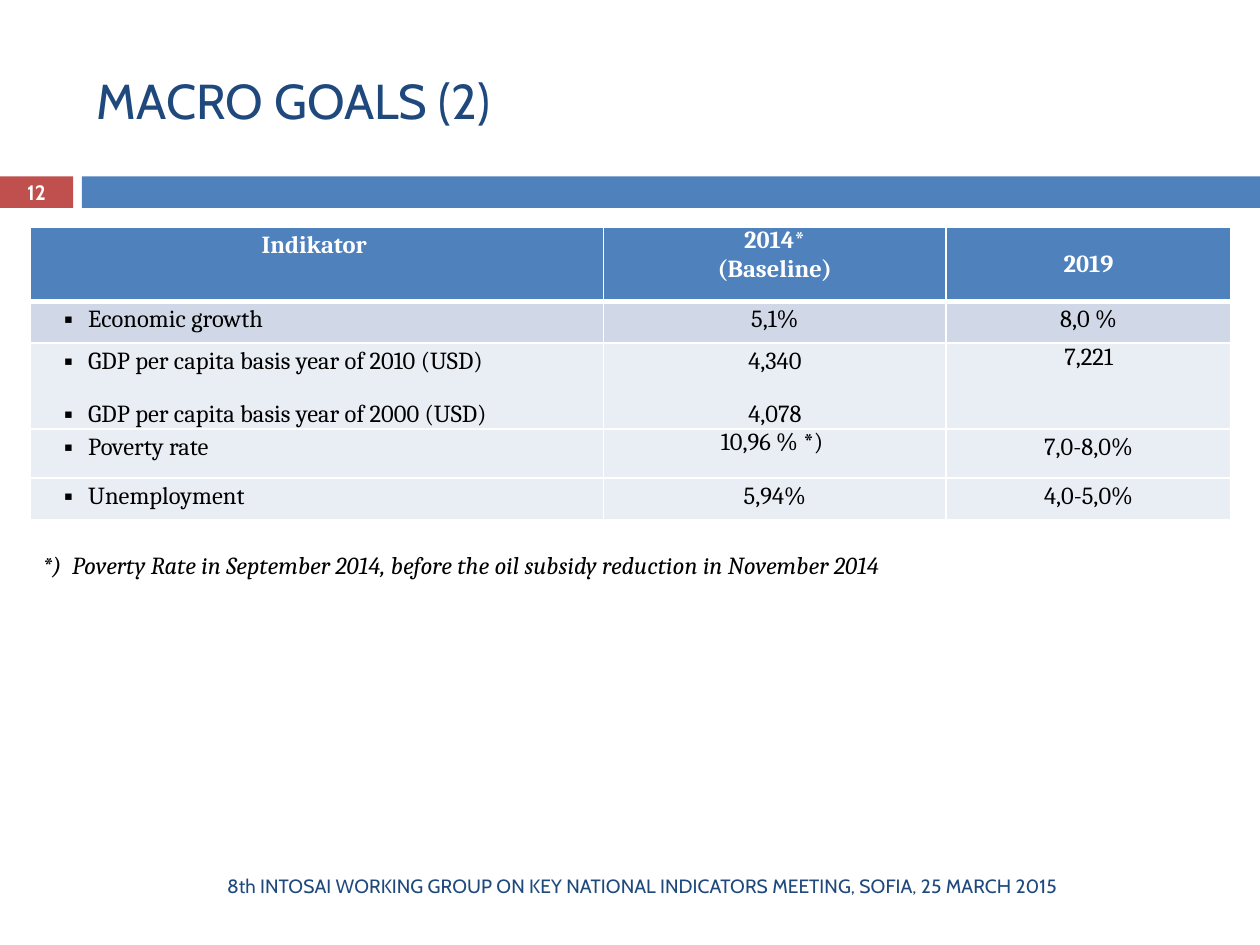
from lxml import etree
from pptx import Presentation, util as u
from pptx.dml.color import RGBColor
from pptx.enum import shapes, text
from pptx.oxml import ns

prs = Presentation()
prs.slide_width, prs.slide_height = u.Inches(10), u.Inches(7.5)
X, Y = prs.slide_width / 100, prs.slide_height / 100
s = prs.slides.add_slide(prs.slide_layouts[6])
CENTER, LEFT, JUSTIFY = text.PP_ALIGN.CENTER, text.PP_ALIGN.LEFT, text.PP_ALIGN.JUSTIFY
TOP, MIDDLE = text.MSO_ANCHOR.TOP, text.MSO_ANCHOR.MIDDLE


def rgb(code):
    return RGBColor.from_string(code)


def write(tf, words, size=14, font="Cambria", color="000000", bold=False, italic=False,
          align=CENTER, lines=None, gap=0, indent=0, hang=None, bullet=None):
    for i, line in enumerate(words.split("\n")):
        p = tf.add_paragraph() if i else tf.paragraphs[0]
        p.alignment = align
        p.space_before = p.space_after = u.Pt(gap)
        if lines:
            p.line_spacing = lines
        pPr = p._p.get_or_add_pPr()
        pPr.set("marL", str(int(indent * X)))
        pPr.set("indent", str(-int((indent if hang is None else hang) * X)))
        if bullet:
            for tag, key, value in (("a:buSzPct", "val", "90000"),
                                    ("a:buFont", "typeface", "Cambria"),
                                    ("a:buChar", "char", bullet)):
                etree.SubElement(pPr, ns.qn(tag)).set(key, value)
        r = p.add_run()
        r.text = line
        f = r.font
        f.size, f.name, f.bold, f.italic = u.Pt(size), font, bold, italic
        f.color.rgb = rgb(color)


for left, width, color in ((0, 5.8, "C0504D"), (6.5, 93.5, "4F81BD")):
    sp = s.shapes.add_shape(shapes.MSO_SHAPE.RECTANGLE, int(left * X), int(18.67 * Y),
                            int(width * X), int(3.33 * Y))
    sp.shadow.inherit = False
    sp.fill.solid()
    sp.fill.fore_color.rgb = rgb(color)
    sp.line.fill.background()

cols = [45.5, 27.2, 22.6]
rows = [7.9, 4.4, 9.07, 5.2, 4.4]
fills = ["4F81BD", "D0D8E8", "E9EDF4", "E9EDF4", "E9EDF4"]
head = dict(color="FFFFFF", bold=True)
item = dict(align=LEFT, lines=1.15, gap=6, indent=3.9, hang=1.9, bullet="▪")
value = dict(lines=1.15, gap=6)
tight = dict(gap=6)
data = [
    [("Indikator ", dict(head, lines=1.15, indent=3.8)), ("2014*\n(Baseline)", head), ("2019", head)],
    [("Economic growth", item), ("5,1%", value), ("8,0 %", value)],
    [("GDP per capita basis year of 2010 (USD)\nGDP per capita basis year of 2000 (USD)", item),
     ("4,340\n4,078", value), ("7,221", tight)],
    [("Poverty rate", item), ("10,96 % *) ", dict(tight, indent=2.5)), ("7,0-8,0%", value)],
    [("Unemployment", item), ("5,94%", value), ("4,0-5,0%", value)],
]
frame = s.shapes.add_table(len(rows), len(cols), int(2.4 * X), int(24 * Y),
                           int(sum(cols) * X), int(sum(rows) * Y))
table = frame.table
for c, width in enumerate(cols):
    table.columns[c].width = int(width * X)
for r, height in enumerate(rows):
    table.rows[r].height = int(height * Y)
    for c, (words, form) in enumerate(data[r]):
        cell = table.cell(r, c)
        cell.margin_left = cell.margin_right = u.Inches(0.07)
        cell.margin_top = cell.margin_bottom = 0
        cell.vertical_anchor = MIDDLE if (r, c) == (0, 2) else TOP
        tcPr = cell._tc.get_or_add_tcPr()
        for side in "LRTB":
            thick = (r, side) in ((0, "B"), (1, "T"))
            ln = etree.SubElement(tcPr, ns.qn("a:ln" + side), w=str(u.Pt(3 if thick else 1)))
            line = etree.SubElement(ln, ns.qn("a:solidFill"))
            etree.SubElement(line, ns.qn("a:srgbClr"), val="FFFFFF")
        cell.fill.solid()
        cell.fill.fore_color.rgb = rgb(fills[r])
        write(cell.text_frame, words, **form)

blue = dict(font="Cabin", color="1F497D")
for left, top, width, height, anchor, words, form in (
    (6.7, 3.33, 89.2, 14.4, MIDDLE, "MACRO GOALS (2)", dict(blue, size=28, align=LEFT)),
    (2.4, 57.07, 95.6, 4.93, TOP,
     "*)  Poverty Rate in September 2014, before the oil subsidy reduction in November 2014",
     dict(italic=True, align=JUSTIFY, lines=1.15, indent=2.5)),
    (6.7, 91.07, 88.6, 5.33, MIDDLE,
     "8th INTOSAI WORKING GROUP ON KEY NATIONAL INDICATORS MEETING, SOFIA, 25 MARCH 2015",
     dict(blue, size=11)),
    (0, 18.53, 5.8, 3.6, MIDDLE, "12", dict(size=11.9, font="Cabin", color="FFFFFF", bold=True)),
):
    tf = s.shapes.add_textbox(int(left * X), int(top * Y), int(width * X), int(height * Y)).text_frame
    tf.word_wrap = True
    tf.vertical_anchor = anchor
    write(tf, words, **form)

prs.save("out.pptx")
